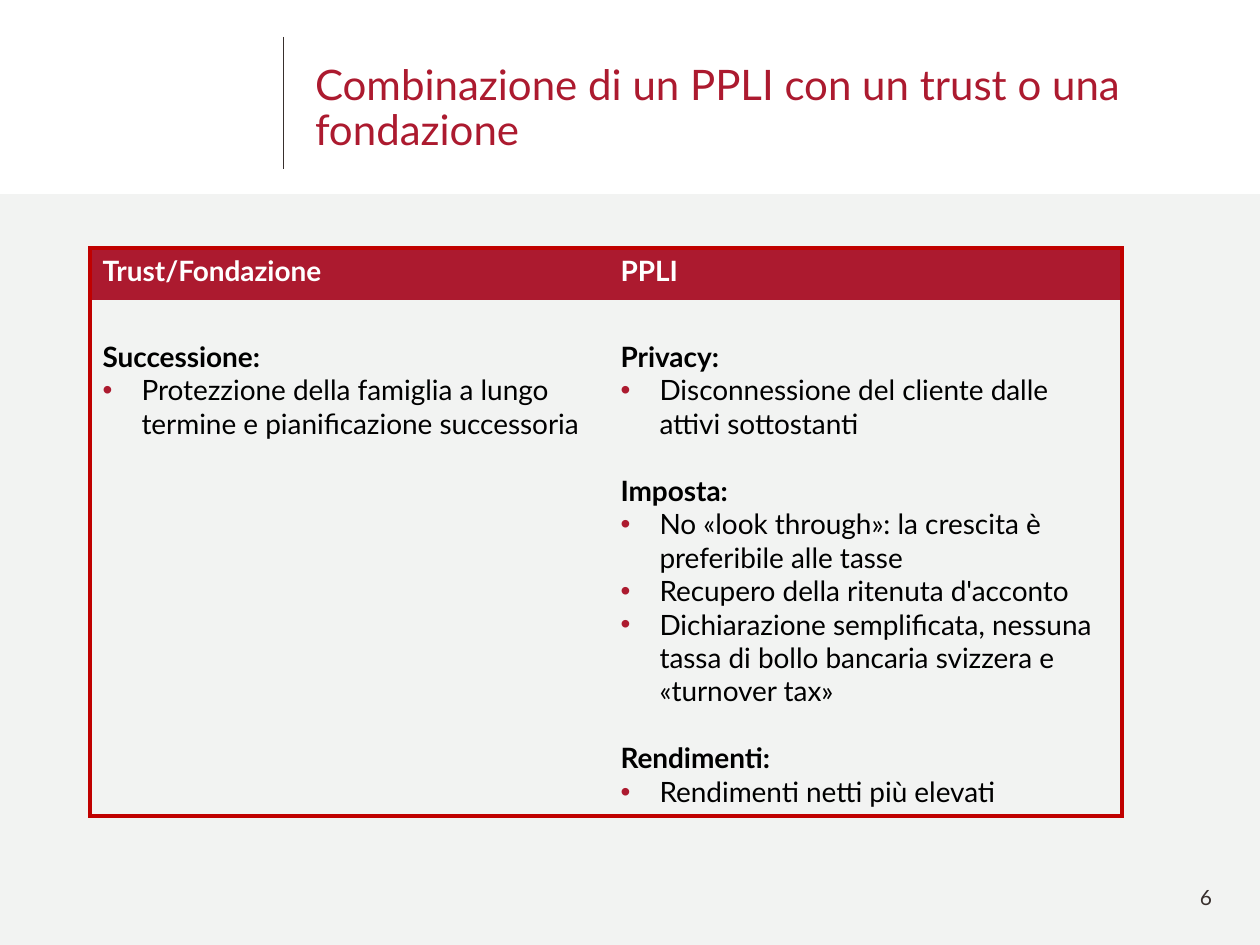
import pptx
import pptx.util
import pptx.dml.color
import pptx.enum.shapes
import pptx.enum.text
import pptx.oxml
import pptx.oxml.ns

SCALE = 914400 / 126
RED, BORDER, DARK, GREY = "AC1A2F", "C00000", "382F2D", "A5ACA7"
BLACK, WHITE = "000000", "FFFFFF"
NS = pptx.oxml.ns.nsdecls("a")
ALIGN = pptx.enum.text.PP_ALIGN
ANCHOR = pptx.enum.text.MSO_ANCHOR


def px(*lengths):
    return [pptx.util.Emu(round(n * SCALE)) for n in lengths]


def rgb(value):
    return pptx.dml.color.RGBColor.from_string(value)


def set_attrs(target, values):
    for name, value in values.items():
        setattr(target, name, value)


def element(xml):
    tag, rest = xml.split(" ", 1)
    return pptx.oxml.parse_xml(f"{tag} {NS} {rest}")


class SlideBuilder:
    font = "Lato"
    bullet_indent = 39
    frame = {"margin_left": 0, "margin_right": 0, "margin_top": 0,
             "margin_bottom": 0, "word_wrap": True,
             "auto_size": pptx.enum.text.MSO_AUTO_SIZE.NONE}

    def __init__(self, prs):
        self.s = prs.slides.add_slide(prs.slide_layouts[5])

    def add_run(self, p, text, size, color, bold=False, **format_values):
        set_attrs(p, format_values)
        r = p.add_run()
        r.text = text
        set_attrs(r.font, {"name": self.font, "size": pptx.util.Pt(size), "bold": bold})
        r.font.color.rgb = rgb(color)

    def place(self, sp, box):
        set_attrs(sp, dict(zip(("left", "top", "width", "height"), px(*box))))

    def title(self, text, box):
        sp = self.s.shapes.title
        self.place(sp, box)
        set_attrs(sp.text_frame, {**self.frame, "vertical_anchor": ANCHOR.TOP})
        self.add_run(sp.text_frame.paragraphs[0], text, 24, RED,
                     alignment=ALIGN.LEFT, line_spacing=0.9)

    def text(self, text, box, size, color):
        tf = self.s.shapes.add_textbox(*px(*box)).text_frame
        set_attrs(tf, {**self.frame, "vertical_anchor": ANCHOR.MIDDLE})
        self.add_run(tf.paragraphs[0], text, size, color, alignment=ALIGN.RIGHT)

    def panel(self, box, color, opacity):
        sp = self.s.shapes.add_shape(
            pptx.enum.shapes.MSO_SHAPE.RECTANGLE, *px(*box))
        sp.shadow.inherit = False
        sp.line.fill.background()
        sp.fill.solid()
        sp.fill.fore_color.rgb = rgb(color)
        fill = sp._element.spPr.find(pptx.oxml.ns.qn("a:solidFill"))
        fill[0].append(element(f'<a:alpha val="{opacity * 1000}"/>'))

    def line(self, start, end, color, width):
        sp = self.s.shapes.add_connector(
            pptx.enum.shapes.MSO_CONNECTOR.STRAIGHT, *px(*start, *end))
        sp.line.color.rgb = rgb(color)
        sp.line.width = pptx.util.Pt(width)
        sp._element.spPr.append(element("<a:effectLst />"))

    def borders(self, cell, red_sides):
        tc_pr = cell._tc.get_or_add_tcPr()
        for i, side in enumerate("LRTB"):
            if side in red_sides:
                fill = f'<a:solidFill><a:srgbClr val="{BORDER}"/></a:solidFill>'
            else:
                fill = "<a:noFill/>"
            tc_pr.insert(i, element(f'<a:ln{side} w="28575">{fill}</a:ln{side}>'))

    def bullet(self, p):
        indent = px(self.bullet_indent)[0]
        p_pr = p._p.get_or_add_pPr()
        p_pr.set("marL", str(indent))
        p_pr.set("indent", str(-indent))
        for xml in (f'<a:buClr ><a:srgbClr val="{RED}"/></a:buClr>',
                    '<a:buFont typeface="Arial"/>', '<a:buChar char="•"/>'):
            p_pr.append(element(xml))

    def sections(self, cell, groups):
        cell.margin_top = px(40)[0]
        tf = cell.text_frame
        for i, (heading, items) in enumerate(groups):
            p = tf.add_paragraph() if i else tf.paragraphs[0]
            gap = {"space_before": pptx.util.Pt(19.2)} if i else {}
            self.add_run(p, heading, 16, BLACK, True, **gap)
            for item in items:
                p = tf.add_paragraph()
                self.bullet(p)
                self.add_run(p, item, 16, BLACK)

    def table(self, columns, box, widths, heights):
        table = self.s.shapes.add_table(2, len(columns), *px(*box)).table
        table.horz_banding = False
        for lines, lengths, name in ((table.columns, widths, "width"),
                                     (table.rows, heights, "height")):
            for line, length in zip(lines, px(*lengths)):
                setattr(line, name, length)
        for i, (heading, groups) in enumerate(columns):
            head, body = table.cell(0, i), table.cell(1, i)
            side = "LR"[i]
            head.fill.solid()
            head.fill.fore_color.rgb = rgb(RED)
            body.fill.background()
            self.borders(head, side + "T")
            self.borders(body, side + "B")
            self.add_run(head.text_frame.paragraphs[0], heading, 16, WHITE, True)
            self.sections(body, groups)


COLUMNS = [
    ("Trust/Fondazione", [
        ("Successione:", [
            "Protezzione della famiglia a lungo termine e pianificazione successoria"]),
    ]),
    ("PPLI", [
        ("Privacy:", ["Disconnessione del cliente dalle attivi sottostanti"]),
        ("Imposta:", [
            "No «look through»: la crescita è preferibile alle tasse",
            "Recupero della ritenuta d'acconto",
            "Dichiarazione semplificata, nessuna tassa di bollo bancaria svizzera "
            "e «turnover tax»"]),
        ("Rendimenti:", ["Rendimenti netti più elevati"]),
    ]),
]


def main():
    prs = pptx.Presentation()
    prs.slide_width, prs.slide_height = px(1260, 945)
    b = SlideBuilder(prs)
    b.line((283, 37), (283, 169), DARK, 0.25)
    b.panel((0, 194, 1260, 751), GREY, 14)
    b.title("Combinazione di un PPLI con un trust o una fondazione", (315, 64, 916, 48))
    b.table(COLUMNS, (90, 248, 1032, 568), (518, 514), (52, 516))
    b.text("6", (929, 872, 283, 50), 12, DARK)
    prs.save("out.pptx")


if __name__ == "__main__":
    main()
